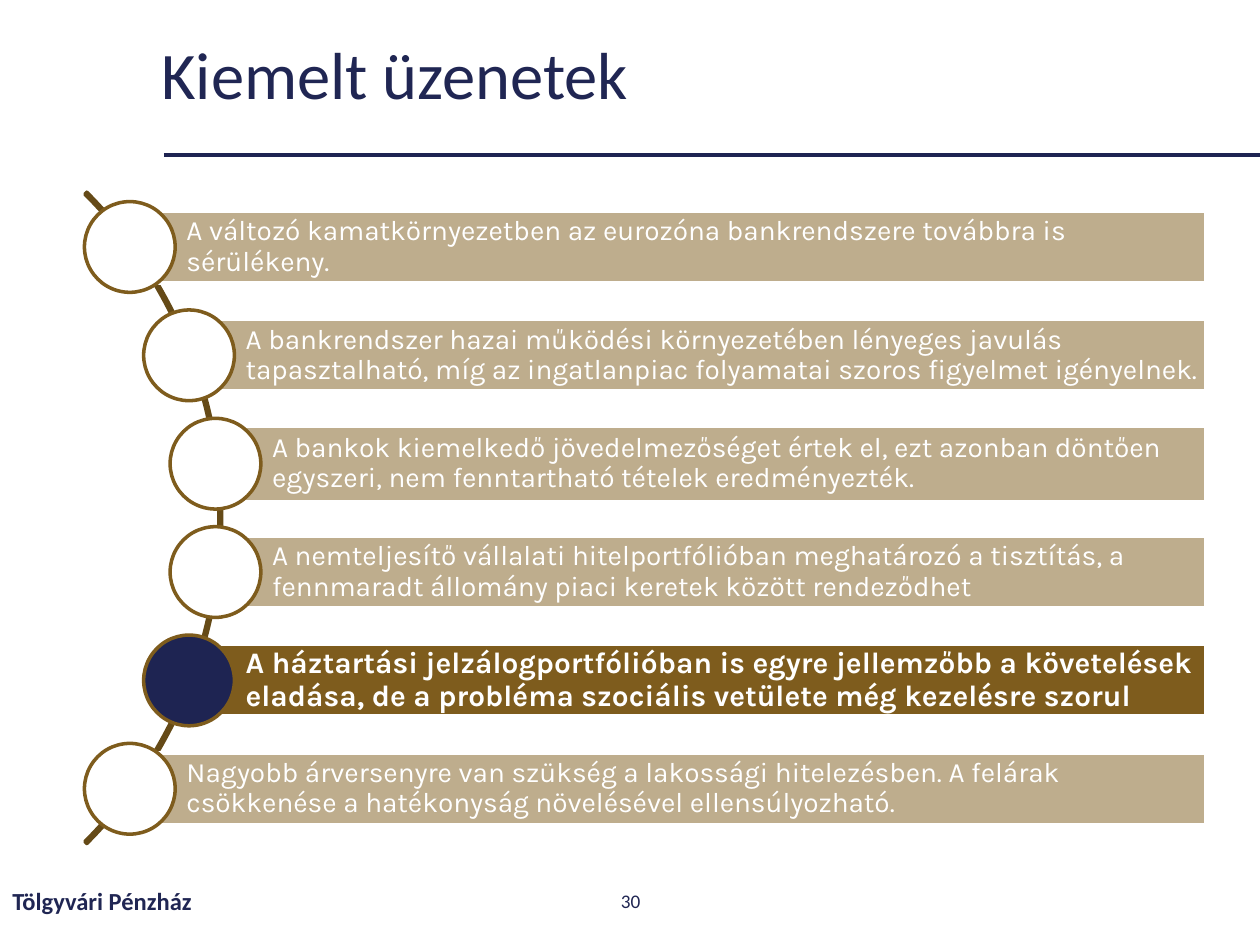
from lxml.etree import SubElement
from pptx import Presentation
from pptx.dml.color import RGBColor
from pptx.enum.shapes import MSO_CONNECTOR, MSO_SHAPE
from pptx.enum.text import MSO_ANCHOR, MSO_AUTO_SIZE, PP_ALIGN
from pptx.oxml.ns import qn
from pptx.util import Inches, Pt

NAVY = RGBColor(0x1E, 0x24, 0x52)
TEXT_NAVY = RGBColor(0x20, 0x26, 0x53)
BROWN = RGBColor(0x7E, 0x5C, 0x1D)
DARK_BROWN = RGBColor(0x65, 0x4A, 0x17)
WHITE = RGBColor(0xFF, 0xFF, 0xFF)

SLIDE_WIDTH, SLIDE_HEIGHT = 10, 7.5
FIRST_ROW, ROW_STEP = 1.96, 0.86  # row centres
BAR_RIGHT, BAR_HEIGHT = 9.57, 0.57
CIRCLE_SIZE = 0.72
ARC_SIZE, ARC_RIGHT = 7.31, 1.76
ROW_LEFTS = [1.03, 1.5, 1.71]  # mirrored in the lower half
HIGHLIGHTED_ROW = 4

MESSAGES = [
    "A változó kamatkörnyezetben az eurozóna bankrendszere továbbra is sérülékeny.",
    "A bankrendszer hazai működési környezetében lényeges javulás tapasztalható, "
    "míg az ingatlanpiac folyamatai szoros figyelmet igényelnek.",
    "A bankok kiemelkedő jövedelmezőséget értek el, ezt azonban döntően egyszeri, "
    "nem fenntartható tételek eredményezték.",
    "A nemteljesítő vállalati hitelportfólióban meghatározó a tisztítás, "
    "a fennmaradt állomány piaci keretek között rendeződhet",
    "A háztartási jelzálogportfólióban is egyre jellemzőbb a követelések eladása, "
    "de a probléma szociális vetülete még kezelésre szorul",
    "Nagyobb árversenyre van szükség a lakossági hitelezésben. "
    "A felárak csökkenése a hatékonyság növelésével ellensúlyozható.",
]


def write_text(shape, text, size, color, font="Calibri", bold=False,
               align=PP_ALIGN.LEFT, line_spacing=1.0):
    frame = shape.text_frame
    frame.word_wrap = True
    frame.auto_size = MSO_AUTO_SIZE.NONE
    frame.vertical_anchor = MSO_ANCHOR.MIDDLE
    frame.text = text
    paragraph = frame.paragraphs[0]
    paragraph.alignment = align
    paragraph.line_spacing = line_spacing
    paragraph.font.name = font
    paragraph.font.size = Pt(size)
    paragraph.font.bold = bold
    paragraph.font.color.rgb = color


def add_shape(slide, kind, left, top, width, height, line, fill=None):
    shape = slide.shapes.add_shape(
        kind, Inches(left), Inches(top), Inches(width), Inches(height))
    shape.shadow.inherit = False
    if fill is None:
        shape.fill.background()
    else:
        shape.fill.solid()
        shape.fill.fore_color.rgb = fill
    shape.line.color.rgb = line
    shape.line.width = Pt(2)
    return shape


def make_half_transparent(shape):
    color = shape._element.spPr.find(qn("a:solidFill")).find(qn("a:srgbClr"))
    SubElement(color, qn("a:alpha"), val="50000")


def add_title(slide, text):
    title = slide.shapes.title
    title.left, title.top = Inches(1.18), Inches(0.2)
    title.width, title.height = Inches(8.19), Inches(0.83)
    write_text(title, text, 38, TEXT_NAVY, line_spacing=0.9)


def add_rule(slide):
    rule = slide.shapes.add_connector(
        MSO_CONNECTOR.STRAIGHT, Inches(1.3), Inches(1.23),
        Inches(SLIDE_WIDTH), Inches(1.23))
    rule.line.color.rgb = NAVY
    rule.line.width = Pt(2.25)
    SubElement(rule._element.spPr, qn("a:effectLst"))


def add_footer(slide, left, width, text, size, **style):
    box = slide.shapes.add_textbox(
        Inches(left), Inches(6.95), Inches(width), Inches(0.4))
    write_text(box, text, size, TEXT_NAVY, **style)


def add_arc(slide):
    middle = FIRST_ROW + ROW_STEP * (len(MESSAGES) - 1) / 2
    arc = add_shape(slide, MSO_SHAPE.BLOCK_ARC, ARC_RIGHT - ARC_SIZE,
                    middle - ARC_SIZE / 2, ARC_SIZE, ARC_SIZE, DARK_BROWN)
    # From 315 to 45 degrees, as a thin band
    for index, value in enumerate((189, 27, 0.003)):
        arc.adjustments[index] = value


def add_message(slide, row, text):
    highlighted = row == HIGHLIGHTED_ROW
    left = ROW_LEFTS[min(row, len(MESSAGES) - 1 - row)]
    center = FIRST_ROW + row * ROW_STEP
    # Bar with its message
    height = 0.6 if row == 2 else BAR_HEIGHT
    bar = add_shape(slide, MSO_SHAPE.RECTANGLE, left, center - height / 2,
                    BAR_RIGHT - left, height, WHITE, BROWN)
    if not highlighted:
        make_half_transparent(bar)
    frame = bar.text_frame
    frame.margin_left = Inches(0.45)
    frame.margin_right = frame.margin_top = frame.margin_bottom = Inches(0.04)
    write_text(bar, text, 17 if highlighted else 16, WHITE, font="Karla",
               bold=highlighted, line_spacing=0.9)
    # Circle centred on the left end of the bar
    add_shape(slide, MSO_SHAPE.OVAL, left - CIRCLE_SIZE / 2,
              center - CIRCLE_SIZE / 2, CIRCLE_SIZE, CIRCLE_SIZE,
              BROWN, NAVY if highlighted else WHITE)


def main():
    presentation = Presentation()
    presentation.slide_width = Inches(SLIDE_WIDTH)
    presentation.slide_height = Inches(SLIDE_HEIGHT)
    slide = presentation.slides.add_slide(presentation.slide_layouts[5])

    # Heading and footer
    add_rule(slide)
    add_title(slide, "Kiemelt üzenetek")
    add_footer(slide, 0, 3.38, "Tölgyvári Pénzház", 14, bold=True)
    add_footer(slide, 3.88, 2.25, "30", 11, align=PP_ALIGN.CENTER)

    # Messages along the arc
    add_arc(slide)
    for row, text in enumerate(MESSAGES):
        add_message(slide, row, text)

    presentation.save("out.pptx")


if __name__ == "__main__":
    main()
